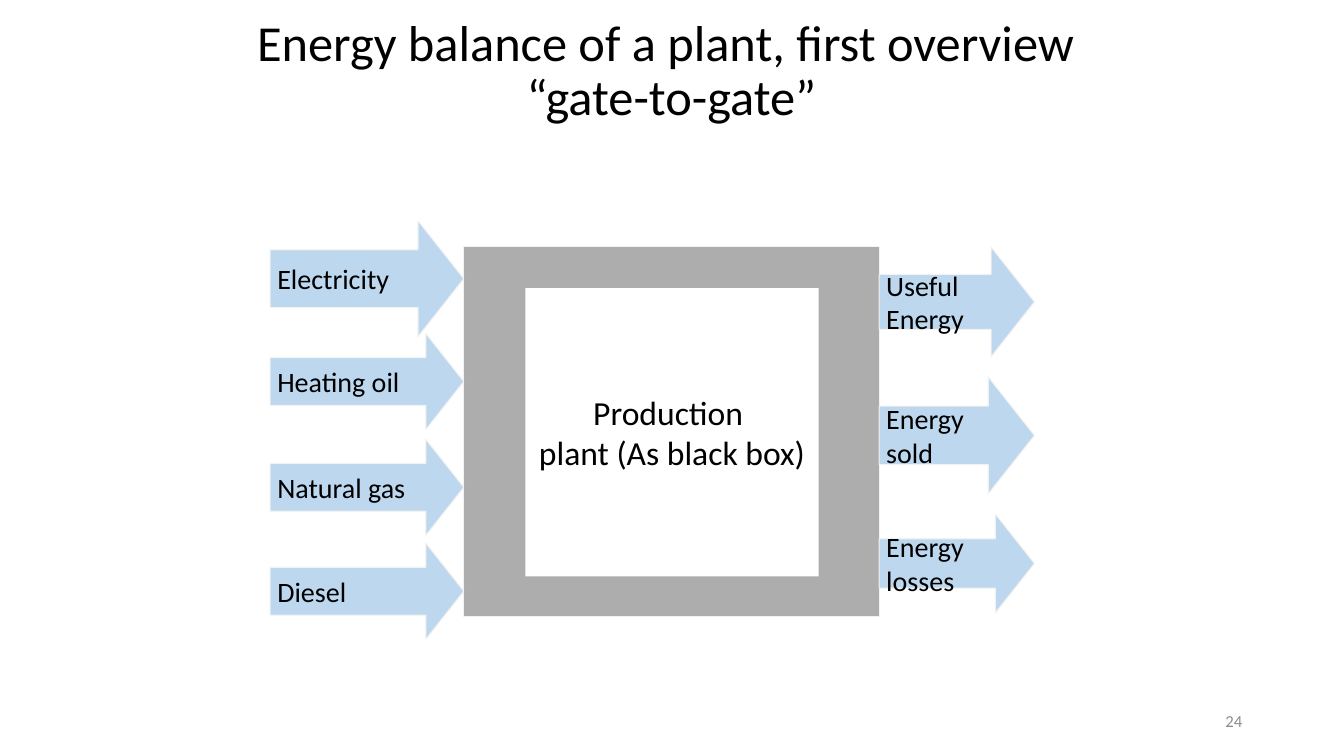
from lxml import etree
from pptx import Presentation
from pptx import util as u
from pptx.dml import color
from pptx.enum import shapes, text
from pptx.oxml import ns


def rgb(value):
    """Turn a hex string into a colour."""
    return color.RGBColor.from_string(value)


class EnergySlide:
    """Hold the style and the current slide."""

    font, ink, muted = "Calibri", "000000", "8C8C8C"
    arrow_fill, outline = "BDD7EE", "F2F2F2"

    def __init__(self, presentation):
        """Add a title-only slide."""
        self.slide = presentation.slides.add_slide(presentation.slide_layouts[5])

    def add_run(self, paragraph, words, size, ink=None):
        """Append one formatted run."""
        run = paragraph.add_run()
        run.text = words
        run.font.name = self.font
        run.font.size = u.Pt(size)
        run.font.color.rgb = rgb(ink or self.ink)

    def add_lines(self, shape, lines, size, align, ink=None):
        """Add one paragraph per line, centred vertically."""
        frame = shape.text_frame
        frame.word_wrap = True
        frame.vertical_anchor = text.MSO_ANCHOR.MIDDLE
        for index, words in enumerate(lines):
            paragraph = frame.add_paragraph() if index else frame.paragraphs[0]
            paragraph.alignment = align
            self.add_run(paragraph, words, size, ink)

    def title(self, lines, left, top, width, height):
        """Place the title with line breaks between its lines."""
        shape = self.slide.shapes.title
        shape.left, shape.top = u.Inches(left), u.Inches(top)
        shape.width, shape.height = u.Inches(width), u.Inches(height)
        frame = shape.text_frame
        frame.vertical_anchor = text.MSO_ANCHOR.MIDDLE
        frame.auto_size = text.MSO_AUTO_SIZE.NONE
        paragraph = frame.paragraphs[0]
        paragraph.alignment = text.PP_ALIGN.CENTER
        paragraph.line_spacing = 0.9
        for index, words in enumerate(lines):
            if index:
                paragraph.add_line_break()
            self.add_run(paragraph, words, 36)

    def block(self, kind, left, top, width, height, fill, outlined=True, alpha=None):
        """Add a filled preset shape with narrow text margins."""
        shape = self.slide.shapes.add_shape(
            kind, u.Inches(left), u.Inches(top), u.Inches(width), u.Inches(height))
        shape.shadow.inherit = False
        shape.fill.solid()
        shape.fill.fore_color.rgb = rgb(fill)
        if alpha is not None:
            shade = shape.element.spPr.find(".//" + ns.qn("a:srgbClr"))
            etree.SubElement(shade, ns.qn("a:alpha")).set("val", str(alpha * 1000))
        if outlined:
            shape.line.color.rgb = rgb(self.outline)
            shape.line.width = u.Pt(0.75)
        else:
            shape.line.fill.background()
        frame = shape.text_frame
        frame.margin_left = frame.margin_right = u.Inches(0.07)
        frame.margin_top = frame.margin_bottom = u.Inches(0.04)
        return shape

    def arrow(self, label, left, top, width, height):
        """Add a labelled energy flow arrow."""
        shape = self.block(shapes.MSO_SHAPE.RIGHT_ARROW, left, top, width, height,
                           self.arrow_fill)
        shape.adjustments[0], shape.adjustments[1] = 0.5, 0.395
        self.add_lines(shape, [label], 20, text.PP_ALIGN.LEFT)

    def page_number(self, number, left, top, width, height):
        """Add the page number."""
        shape = self.slide.shapes.add_textbox(
            u.Inches(left), u.Inches(top), u.Inches(width), u.Inches(height))
        self.add_lines(shape, [number], 12, text.PP_ALIGN.RIGHT, self.muted)


def main():
    """Build and save the energy balance slide."""
    presentation = Presentation()
    presentation.slide_width, presentation.slide_height = u.Inches(13.33), u.Inches(7.5)
    page = EnergySlide(presentation)
    page.title(["Energy balance of a plant, first overview ", "“gate-to-gate”"],
               2.35, 0.17, 8.62, 1.09)
    page.page_number("24", 9.42, 6.95, 3, 0.4)

    rectangle = shapes.MSO_SHAPE.RECTANGLE
    page.block(rectangle, 4.6, 2.45, 4.12, 3.67, "808080", alpha=64)
    plant = page.block(rectangle, 5.21, 2.86, 2.91, 2.86, "FFFFFF", outlined=False)
    page.add_lines(plant, ["Production ", "plant (As black box)"], 24,
                   text.PP_ALIGN.CENTER)

    inputs = [("Electricity", 2.19, 1.15), ("Heating oil", 3.31, 0.95),
              ("Natural gas", 4.36, 0.95), ("Diesel", 5.39, 0.95)]
    outputs = [("Useful Energy", 2.45, 1.09), ("Energy sold", 3.74, 1.16),
               ("Energy losses", 5.1, 0.98)]
    for left, width, flows in ((2.68, 1.92, inputs), (8.72, 1.54, outputs)):
        for label, top, height in flows:
            page.arrow(label, left, top, width, height)
    presentation.save("out.pptx")


if __name__ == "__main__":
    main()
